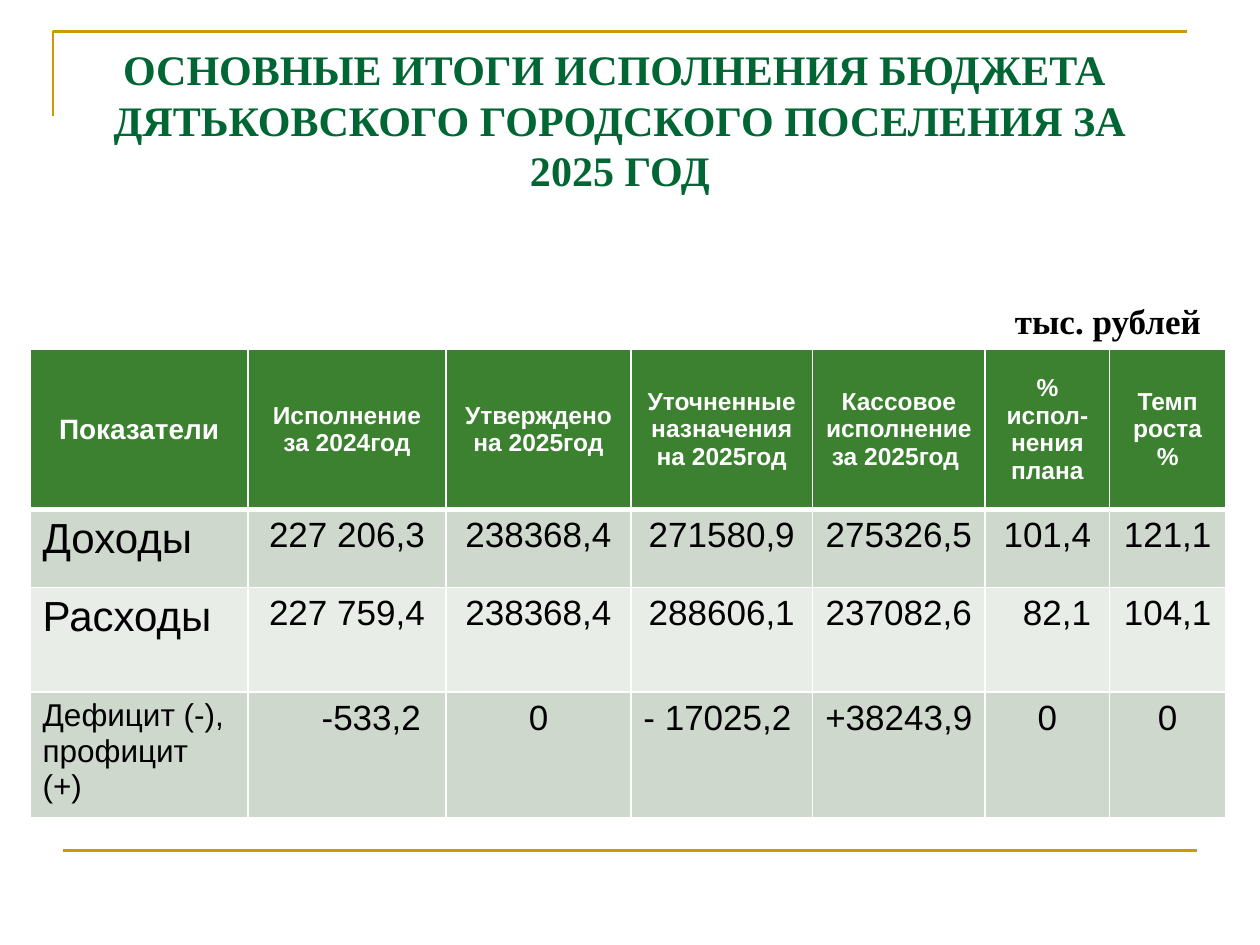
from dataclasses import dataclass

from lxml import etree
from pptx import Presentation
from pptx import util as u
from pptx.dml.color import RGBColor
from pptx.enum import shapes, text
from pptx.oxml import ns

GOLD = RGBColor(0xCC, 0x99, 0x00)
PINE = RGBColor(0x00, 0x66, 0x33)
GREEN = RGBColor(0x3B, 0x81, 0x2F)
SAGE = RGBColor(0xCE, 0xD8, 0xCD)
PALE = RGBColor(0xE8, 0xED, 0xE8)
WHITE = RGBColor(0xFF, 0xFF, 0xFF)
BLACK = RGBColor(0x00, 0x00, 0x00)
SERIF = "Times New Roman"
SANS = "Arial"
LEFT = text.PP_ALIGN.LEFT
MID = text.PP_ALIGN.CENTER
WIDTHS = (4.39, 3.99, 3.73, 3.66, 3.48, 2.51, 2.34)
INSET = 0.25


@dataclass
class Label:
    words: str
    left: float
    top: float
    width: float
    height: float
    size: int
    color: RGBColor


@dataclass
class Row:
    cells: tuple[str, ...]
    height: float
    first: int
    rest: int
    fill: RGBColor
    color: RGBColor = BLACK
    head: bool = False


LABELS = (
    Label("ОСНОВНЫЕ ИТОГИ ИСПОЛНЕНИЯ БЮДЖЕТА \vДЯТЬКОВСКОГО ГОРОДСКОГО ПОСЕЛЕНИЯ ЗА 2025 ГОД",
          1.09, 0.76, 22.81, 4.17, 24, PINE),
    Label("тыс. рублей", 19.91, 5.92, 4.85, 0.99, 20, BLACK),
)
ROWS = (
    Row(("Показатели", "Исполнение за 2024год", "Утверждено на 2025год",
         "Уточненные назначения на 2025год", "Кассовое исполнение за 2025год ",
         "% испол-нения плана", "Темп роста %"), 3.23, 16, 14, GREEN, WHITE, True),
    Row(("Доходы", "227 206,3", "238368,4", "271580,9", "275326,5", "101,4", "121,1"),
        1.57, 24, 20, SAGE),
    Row(("Расходы", "227 759,4", "238368,4", "288606,1", "237082,6", "82,1", "104,1"),
        2.11, 24, 20, PALE),
    Row(("Дефицит (-), профицит (+)", "-533,2", "0", "- 17025,2", "+38243,9", "0", "0"),
        2.54, 18, 20, SAGE),
)
SHIFTS = {"82,1": 0.39, "-533,2": 0.98}
FLUSH = {"- 17025,2"}


def style(para, face: str, size: int, color: RGBColor, bold: bool, align) -> None:
    para.alignment = align
    font = para.font
    font.name, font.size, font.bold = face, u.Pt(size), bold
    font.color.rgb = color


def paint(line) -> None:
    line.color.rgb = GOLD
    line.width = u.Pt(1.5)


def frame(slide) -> None:
    pen = slide.shapes.build_freeform(u.Cm(1.07), u.Cm(2.34))
    pen.add_line_segments([(u.Cm(1.07), u.Cm(0.64)), (u.Cm(23.93), u.Cm(0.64))], close=False)
    angle = pen.convert_to_shape()
    angle.shadow.inherit = False
    angle.fill.background()
    paint(angle.line)
    rule = slide.shapes.add_connector(
        shapes.MSO_CONNECTOR.STRAIGHT, u.Cm(1.27), u.Cm(17.15), u.Cm(24.13), u.Cm(17.15))
    etree.SubElement(rule._element.spPr, ns.qn("a:effectLst"))
    paint(rule.line)


def write(slide, label: Label) -> None:
    box = slide.shapes.add_textbox(
        u.Cm(label.left), u.Cm(label.top), u.Cm(label.width), u.Cm(label.height))
    body = box.text_frame
    body.word_wrap = True
    body.text = label.words
    style(body.paragraphs[0], SERIF, label.size, label.color, True, MID)


def edge(cell, side: str, width: float) -> None:
    line = etree.SubElement(cell._tc.get_or_add_tcPr(), ns.qn(f"a:ln{side}"), w=str(u.Pt(width)))
    fill = etree.SubElement(line, ns.qn("a:solidFill"))
    etree.SubElement(fill, ns.qn("a:srgbClr"), val=str(WHITE))


def fill_cell(cell, row: Row, col: int, above: bool) -> None:
    words = row.cells[col]
    for side in "LRTB":
        thick = (side == "B" and row.head) or (side == "T" and above)
        edge(cell, side, 3 if thick else 1)
    cell.fill.solid()
    cell.fill.fore_color.rgb = row.fill
    cell.margin_left = u.Cm(INSET + SHIFTS.get(words, 0))
    cell.margin_right = u.Cm(INSET)
    cell.vertical_anchor = text.MSO_ANCHOR.MIDDLE if row.head else text.MSO_ANCHOR.TOP
    cell.text = words
    flush = words in FLUSH or (col == 0 and not row.head)
    size = row.rest if col else row.first
    style(cell.text_frame.paragraphs[0], SANS, size, row.color, row.head, LEFT if flush else MID)


def tabulate(slide) -> None:
    grid = slide.shapes.add_table(
        len(ROWS), len(WIDTHS), u.Cm(0.61), u.Cm(7.04),
        u.Cm(sum(WIDTHS)), u.Cm(sum(row.height for row in ROWS))).table
    for col, width in zip(grid.columns, WIDTHS):
        col.width = u.Cm(width)
    for i, row in enumerate(ROWS):
        grid.rows[i].height = u.Cm(row.height)
        for j in range(len(WIDTHS)):
            fill_cell(grid.cell(i, j), row, j, i > 0 and ROWS[i - 1].head)


def main() -> None:
    deck = Presentation()
    deck.slide_width, deck.slide_height = u.Cm(25.4), u.Cm(19.05)
    slide = deck.slides.add_slide(deck.slide_layouts[6])
    frame(slide)
    tabulate(slide)
    for label in LABELS:
        write(slide, label)
    deck.save("out.pptx")


if __name__ == "__main__":
    main()
